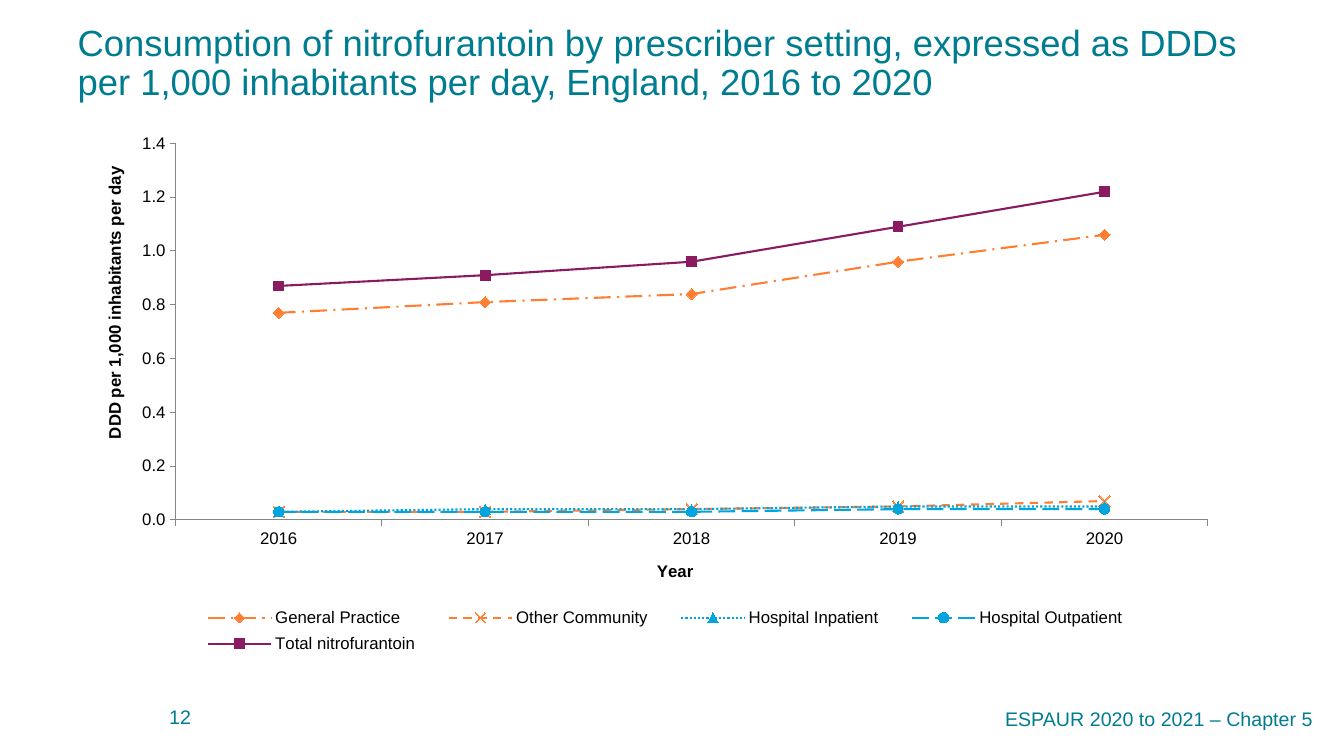
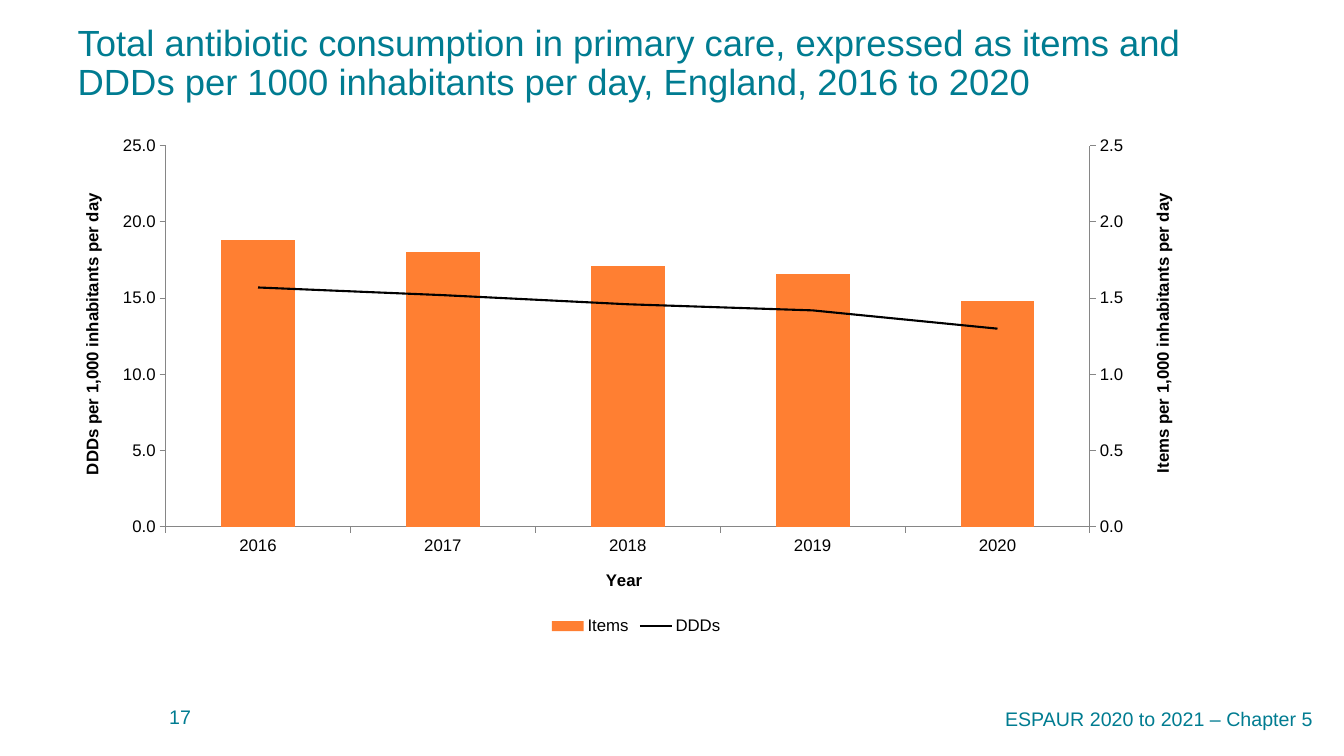
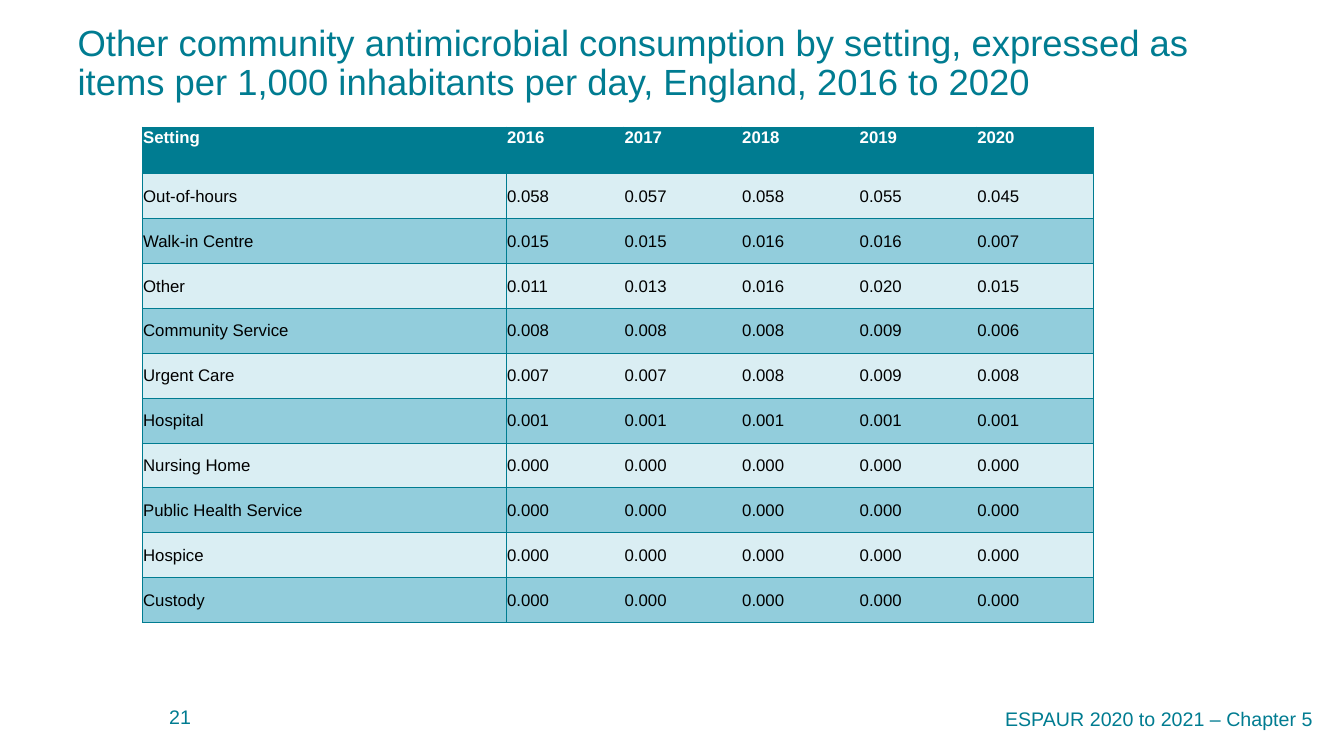
import copy

import lxml.etree
import pptx
import pptx.chart.axis
import pptx.chart.data
import pptx.dml.color
import pptx.enum.chart
import pptx.enum.dml
import pptx.enum.text
import pptx.oxml.ns
import pptx.util

Inches = pptx.util.Inches
Pt = pptx.util.Pt
qn = pptx.oxml.ns.qn
Kind = pptx.enum.chart.XL_CHART_TYPE
Mark = pptx.enum.chart.XL_MARKER_STYLE
Dash = pptx.enum.dml.MSO_LINE
Align = pptx.enum.text.PP_ALIGN
Anchor = pptx.enum.text.MSO_ANCHOR

FONT = "Arial"
HUES = {
    "teal": "007C91", "pale": "DAEEF3", "mid": "92CDDC",
    "orange": "FF7F32", "blue": "00A5DF", "plum": "8A1B61",
    "black": "000000", "white": "FFFFFF", "grey": "868686",
}
YEARS = ["2016", "2017", "2018", "2019", "2020"]


def hue(name):
    return pptx.dml.color.RGBColor.from_string(HUES[name])


def node(top, tag, **attrs):
    return lxml.etree.SubElement(top, qn(tag), **attrs)


def place(top, index, **spots):
    """Give a chart part a manual layout, as shares of the chart."""
    old = top.find(qn("c:layout"))
    if old is not None:
        top.remove(old)
    lay = node(top, "c:layout")
    man = node(lay, "c:manualLayout")
    if top.tag == qn("c:plotArea"):
        node(man, "c:layoutTarget", val="inner")
    for key in ("x", "y"):
        node(man, f"c:{key}Mode", val="edge")
    for key, val in spots.items():
        node(man, f"c:{key}", val=str(val))
    top.insert(index, lay)


class Deck:
    def __init__(self):
        self.prs = pptx.Presentation()
        self.prs.slide_width = Inches(13.33)
        self.prs.slide_height = Inches(7.5)
        self.slide = None

    def style(self, font, size, color="black", bold=False):
        font.name, font.size, font.bold = FONT, Pt(size), bold
        font.color.rgb = hue(color)

    # Title, footer and page number
    def page(self, title, number):
        self.slide = self.prs.slides.add_slide(self.prs.slide_layouts[5])
        head = self.slide.shapes.title
        head.left, head.top = Inches(0.67), Inches(0.2)
        head.width, head.height = Inches(12.17), Inches(1.06)
        frame = head.text_frame
        frame.text = title
        frame.vertical_anchor = Anchor.TOP
        frame.auto_size = pptx.enum.text.MSO_AUTO_SIZE.NONE
        para = frame.paragraphs[0]
        para.alignment, para.line_spacing = Align.LEFT, 0.9
        self.style(para.runs[0].font, 26, "teal")
        self.text("ESPAUR 2020 to 2021 – Chapter 5",
                  (0.14, 6.82, 12.98, 0.62), Align.RIGHT)
        self.text(str(number), (0.89, 6.91, 10.94, 0.4), indent=0.69)

    def text(self, words, box, align=Align.LEFT, indent=0):
        frame = self.slide.shapes.add_textbox(*map(Inches, box)).text_frame
        frame.word_wrap = True
        frame.vertical_anchor = Anchor.MIDDLE
        frame.text = words
        para = frame.paragraphs[0]
        para.alignment = align
        if indent:
            para._p.get_or_add_pPr().set("marL", str(Inches(indent)))
        self.style(para.runs[0].font, 14, "teal")

    # Charts
    def chart(self, kind, box, rows, plot):
        data = pptx.chart.data.CategoryChartData()
        data.categories = YEARS
        for name, vals in rows:
            data.add_series(name, vals)
        chart = self.slide.shapes.add_chart(
            kind, *map(Inches, box), data).chart
        self.style(chart.font, 12)
        chart.has_title = False
        chart.has_legend = True
        chart.legend.position = pptx.enum.chart.XL_LEGEND_POSITION.BOTTOM
        chart.legend.include_in_layout = False
        chart.plots[0].vary_by_categories = False
        area = chart._chartSpace.chart.plotArea
        place(area, 0, **dict(zip("xywh", plot)))
        return chart

    def axis(self, axis, title, x, y, top=None, step=None):
        axis.has_major_gridlines = False
        axis.major_tick_mark = pptx.enum.chart.XL_TICK_MARK.OUTSIDE
        axis.minor_tick_mark = pptx.enum.chart.XL_TICK_MARK.NONE
        axis.format.line.color.rgb = hue("grey")
        axis.format.line.width = Pt(0.75)
        frame = axis.axis_title.text_frame
        frame.text = title
        self.style(frame.paragraphs[0].runs[0].font, 12, bold=True)
        place(axis.axis_title._element, 1, x=x, y=y)
        if top:
            axis.minimum_scale, axis.maximum_scale = 0, top
            axis.major_unit = step
            axis.tick_labels.number_format = "0.0"
            axis.tick_labels.number_format_is_linked = False
            body = frame._txBody.find(qn("a:bodyPr"))
            body.set("rot", "-5400000")
            body.set("vert", "horz")

    def line(self, series, color, dash=None, mark=Mark.NONE, size=None):
        series.smooth = False
        series.format.line.color.rgb = hue(color)
        series.format.line.width = Pt(1.5)
        if dash:
            series.format.line.dash_style = dash
        series.marker.style = mark
        if size:
            series.marker.size = size
            look = series.marker.format
            look.line.color.rgb = hue(color)
            if mark == Mark.X:
                look.fill.background()
            else:
                look.fill.solid()
                look.fill.fore_color.rgb = hue(color)

    def second(self, chart):
        """Make the last series a line on its own axes, at left and bottom.

        The columns keep the first value axis, now at right.
        Returns the year axis, the right axis and the left axis.
        """
        area = chart._chartSpace.chart.plotArea
        bars = area.find(qn("c:barChart"))
        row = bars.findall(qn("c:ser"))[-1]
        flag = row.find(qn("c:invertIfNegative"))
        if flag is not None:
            row.remove(flag)
        lines = node(area, "c:lineChart")
        node(lines, "c:grouping", val="standard")
        node(lines, "c:varyColors", val="0")
        lines.append(row)
        node(lines, "c:marker", val="1")
        bars.addnext(lines)
        ids = {}
        for num, mark in enumerate(bars.findall(qn("c:axId")), 1):
            ids[mark.get("val")] = str(50000 + num)
            node(lines, "c:axId", val=str(50000 + num))
        cat, val = area.find(qn("c:catAx")), area.find(qn("c:valAx"))
        years, left = copy.deepcopy(cat), copy.deepcopy(val)
        for twin in (years, left):
            for tag in ("c:axId", "c:crossAx"):
                mark = twin.find(qn(tag))
                mark.set("val", ids[mark.get("val")])
        val.addnext(left)
        left.addnext(years)
        val.find(qn("c:axPos")).set("val", "r")
        val.find(qn("c:crosses")).set("val", "max")
        hidden = pptx.chart.axis.CategoryAxis(cat)
        hidden.visible = False
        return (pptx.chart.axis.CategoryAxis(years),
                pptx.chart.axis.ValueAxis(val),
                pptx.chart.axis.ValueAxis(left))

    # Table
    def table(self, box, first, rows):
        table = self.slide.shapes.add_table(
            len(rows), len(rows[0]), *map(Inches, box)).table
        table.horz_banding = False
        last = len(rows[0]) - 1
        rest = (box[2] - first) / last
        for c, col in enumerate(table.columns):
            col.width = Inches(rest if c else first)
        high = 0.46
        rest = (box[3] - high) / (len(rows) - 1)
        for r, row in enumerate(rows):
            table.rows[r].height = Inches(rest if r else high)
            for c, words in enumerate(row):
                self.cell(table.cell(r, c), words, r, c, last)

    def cell(self, cell, words, r, c, last):
        cell.margin_left = cell.margin_right = cell.margin_top = Inches(0.01)
        cell.margin_bottom = 0
        cell.vertical_anchor = Anchor.MIDDLE if r else Anchor.TOP
        cell.text = words
        font = cell.text_frame.paragraphs[0].runs[0].font
        self.style(font, 12, "black" if r else "white", not r)
        # Body years have no rules between them
        sides = {"L": c < 2, "R": c in (0, last), "T": True, "B": True}
        props = cell._tc.get_or_add_tcPr()
        for side, shown in sides.items():
            edge = node(props, f"a:ln{side}", w=str(Pt(0.5)))
            if shown or not r:
                fill = node(edge, "a:solidFill")
                node(fill, "a:srgbClr", val=HUES["teal"])
            else:
                node(edge, "a:noFill")
        cell.fill.solid()
        cell.fill.fore_color.rgb = hue(
            "teal" if not r else "pale" if r % 2 else "mid")


def main():
    deck = Deck()

    # Nitrofurantoin by prescriber setting
    deck.page("Consumption of nitrofurantoin by prescriber setting, expressed "
              "as DDDs per 1,000 inhabitants per day, England, 2016 to 2020", 12)
    rows = [
        ("General Practice", (0.77, 0.81, 0.84, 0.96, 1.06)),
        ("Other Community", (0.03, 0.03, 0.04, 0.05, 0.07)),
        ("Hospital Inpatient", (0.03, 0.04, 0.04, 0.05, 0.05)),
        ("Hospital Outpatient", (0.03, 0.03, 0.03, 0.04, 0.04)),
        ("Total nitrofurantoin", (0.87, 0.91, 0.96, 1.09, 1.22)),
    ]
    looks = [
        ("orange", Dash.LONG_DASH_DOT, Mark.DIAMOND, 8),
        ("orange", Dash.DASH, Mark.X, 8),
        ("blue", Dash.ROUND_DOT, Mark.TRIANGLE, 7),
        ("blue", Dash.LONG_DASH, Mark.CIRCLE, 7),
        ("plum", None, Mark.SQUARE, 7),
    ]
    chart = deck.chart(Kind.LINE_MARKERS, (0.89, 1.3, 11.19, 5.36), rows,
                       (0.076, 0.023, 0.915, 0.697))
    place(chart.legend._element, 1, x=0.08, y=0.87, w=0.86, h=0.11)
    deck.axis(chart.category_axis, "Year", 0.5, 0.79)
    deck.axis(chart.value_axis, "DDD per 1,000 inhabitants per day",
              0.01, 0.06, 1.4, 0.2)
    for series, look in zip(chart.plots[0].series, looks):
        deck.line(series, *look)

    # Primary care: items and DDDs
    deck.page("Total antibiotic consumption in primary care, expressed as items "
              "and DDDs per 1000 inhabitants per day, England, 2016 to 2020", 17)
    rows = [("Items", (1.88, 1.8, 1.71, 1.66, 1.48)),
            ("DDDs", (15.7, 15.2, 14.6, 14.2, 13))]
    chart = deck.chart(Kind.COLUMN_CLUSTERED, (0.78, 1.22, 11.06, 5.12), rows,
                       (0.078, 0.044, 0.829, 0.739))
    years, items, ddds = deck.second(chart)
    deck.axis(years, "Year", 0.47, 0.86)
    deck.axis(items, "Items per 1,000 inhabitants per day",
              0.96, 0.13, 2.5, 0.5)
    deck.axis(ddds, "DDDs per 1,000 inhabitants per day", 0, 0.13, 25, 5)
    bars, lines = chart.plots
    bars.gap_width = 150
    fill = bars.series[0].format.fill
    fill.solid()
    fill.fore_color.rgb = hue("orange")
    deck.line(lines.series[0], "black")

    # Other community settings
    deck.page("Other community antimicrobial consumption by setting, expressed "
              "as items per 1,000 inhabitants per day, England, 2016 to 2020", 21)
    none = ["0.000"] * 5
    deck.table((1.41, 1.26, 9.44, 4.92), 3.61, [
        ["Setting", *YEARS],
        ["Out-of-hours", "0.058", "0.057", "0.058", "0.055", "0.045"],
        ["Walk-in Centre", "0.015", "0.015", "0.016", "0.016", "0.007"],
        ["Other", "0.011", "0.013", "0.016", "0.020", "0.015"],
        ["Community Service", "0.008", "0.008", "0.008", "0.009", "0.006"],
        ["Urgent Care", "0.007", "0.007", "0.008", "0.009", "0.008"],
        ["Hospital", *["0.001"] * 5],
        ["Nursing Home", *none],
        ["Public Health Service", *none],
        ["Hospice", *none],
        ["Custody", *none],
    ])

    deck.prs.save("out.pptx")


if __name__ == "__main__":
    main()
